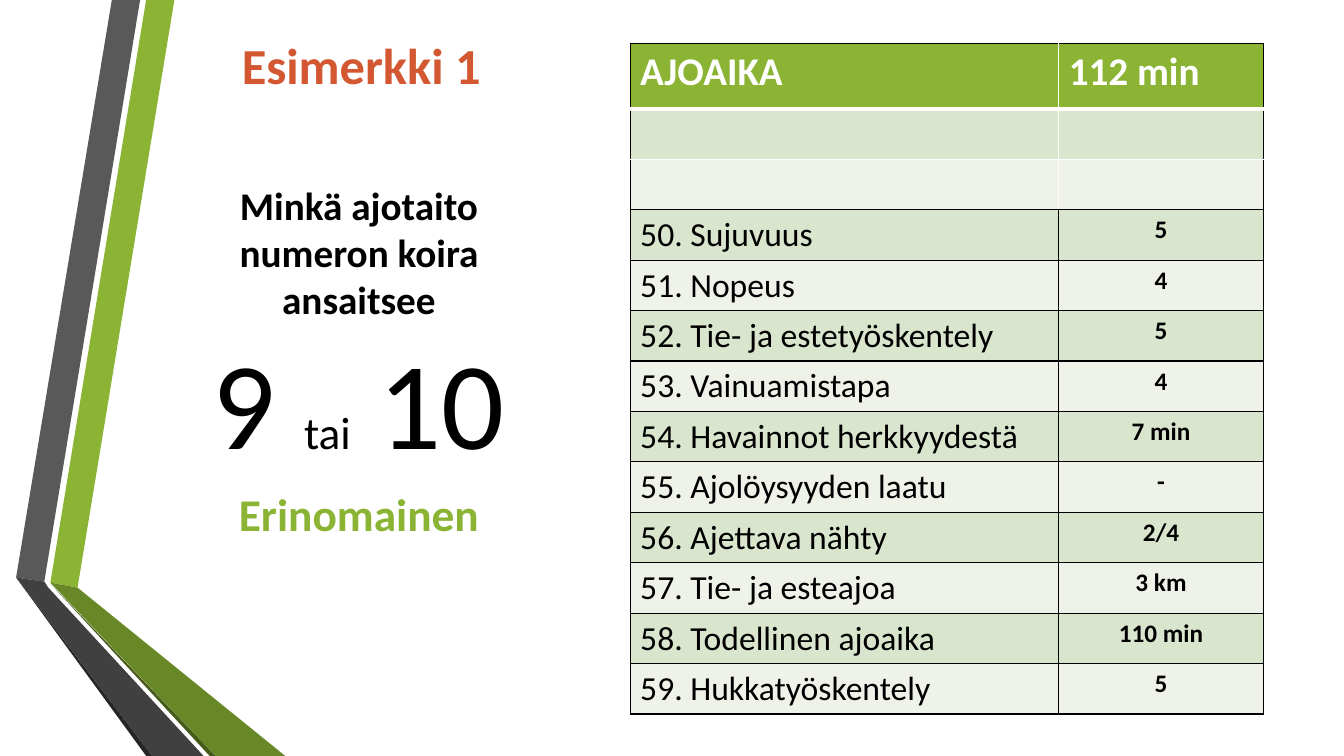
import pptx
import pptx.util
import pptx.dml.color
import pptx.enum.text
import pptx.oxml
import pptx.oxml.ns

Inches = pptx.util.Inches
Pt = pptx.util.Pt
ALIGN = pptx.enum.text.PP_ALIGN
ANCHOR = pptx.enum.text.MSO_ANCHOR

BLACK, WHITE = "000000", "FFFFFF"
GREEN, ORANGE = "8BB434", "D35731"
BANDS = ["DAE5CE", "EEF2E8"]

# Ribbon pieces: fill and corner points, in inches from the ribbon's corner
RIBBONS = [
    (GREEN, [(0.5, 5.78), (0.77, 5.83), (1.73, 0), (1.45, 0)]),
    ("595959", [(1.39, 0), (1.11, 0), (0.16, 5.73), (0.44, 5.77)]),
    ("262626", [(0.16, 5.73), (1.45, 7.5), (1.51, 7.5)]),
    ("465A1A", [(0.5, 5.79), (2.08, 7.5), (2.14, 7.5)]),
    ("688727", [(0.5, 5.78), (2.14, 7.5), (2.83, 7.5), (0.77, 5.83)]),
    ("404040", [(2.02, 7.5), (0.48, 5.83), (0.44, 5.77), (0.16, 5.73), (1.51, 7.5)]),
]

SCORES = [
    ("AJOAIKA", "112 min"),
    ("", ""),
    ("", ""),
    ("50. Sujuvuus", "5"),
    ("51. Nopeus", "4"),
    ("52. Tie- ja estetyöskentely", "5"),
    ("53. Vainuamistapa", "4"),
    ("54. Havainnot herkkyydestä", "7 min"),
    ("55. Ajolöysyyden laatu", "-"),
    ("56. Ajettava nähty", "2/4"),
    ("57. Tie- ja esteajoa", "3 km"),
    ("58. Todellinen ajoaika", "110 min"),
    ("59. Hukkatyöskentely", "5"),
]
FIRST_SCORE = 3


def rgb(color):
    return pptx.dml.color.RGBColor.from_string(color)


def add_run(p, text, size, color=BLACK, bold=False):
    r = p.add_run()
    r.text = text
    r.font.name = "Calibri"
    r.font.size = Pt(size)
    r.font.bold = bold
    r.font.color.rgb = rgb(color)


def add_text_box(s, x, y, w, h, anchor=ANCHOR.TOP):
    tf = s.shapes.add_textbox(Inches(x), Inches(y), Inches(w), Inches(h)).text_frame
    tf.word_wrap = True
    tf.vertical_anchor = anchor
    return tf


def add_ribbons(s, x, y):
    for color, points in RIBBONS:
        corners = [(Inches(x + px), Inches(y + py)) for px, py in points]
        builder = s.shapes.build_freeform(*corners[0])
        builder.add_line_segments(corners[1:], close=True)
        sp = builder.convert_to_shape()
        sp.shadow.inherit = False
        sp.fill.solid()
        sp.fill.fore_color.rgb = rgb(color)
        sp.line.fill.background()


def add_question(s, x, y, w):
    # Heading
    tf = add_text_box(s, x + 0.68, y, 3.37, 0.71)
    add_run(tf.paragraphs[0], "Esimerkki 1", 36, ORANGE, True)

    # Question
    tf = add_text_box(s, x, y + 1.46, w, 1.5, ANCHOR.BOTTOM)
    p = tf.paragraphs[0]
    p.alignment = ALIGN.CENTER
    add_run(p, "Minkä ajotaito numeron koira ansaitsee", 28, BLACK, True)

    # Answer
    tf = add_text_box(s, x, y + 2.94, w, 2)
    tf.margin_top = tf.margin_bottom = 0
    p = tf.paragraphs[0]
    p.alignment = ALIGN.CENTER
    p.space_after = Pt(6)
    add_run(p, "9 ", 88.8)
    add_run(p, "tai", 32.4)
    add_run(p, " 10", 88.8)
    p = tf.add_paragraph()
    p.alignment = ALIGN.CENTER
    p.space_before = Pt(2)
    add_run(p, "Erinomainen", 32.4, GREEN, True)


def set_borders(cell, borders):
    tc_pr = cell._tc.get_or_add_tcPr()
    for i, side in enumerate("LRTB"):
        color, width = borders[side]
        tc_pr.insert(i, pptx.oxml.parse_xml(
            f'<a:ln{side} {pptx.oxml.ns.nsdecls("a")} w="{Pt(width)}"><a:solidFill>'
            f'<a:srgbClr val="{color}"/></a:solidFill></a:ln{side}>'))


def cell_borders(row, col):
    borders = {side: (BLACK, 1) for side in "LRTB"}
    if row < FIRST_SCORE:
        borders["L" if col else "R"] = (WHITE, 1)
        if row > 0:
            borders["T"] = (WHITE, 3 if row == 1 else 1)
        if row < FIRST_SCORE - 1:
            borders["B"] = (WHITE, 3 if row == 0 else 1)
    return borders


def add_score_table(s, x, y, widths, header_h, row_h):
    height = header_h + row_h * (len(SCORES) - 1)
    table = s.shapes.add_table(len(SCORES), len(widths), Inches(x), Inches(y),
                               Inches(sum(widths)), Inches(height)).table
    table.first_row = table.horz_banding = False
    for col, width in enumerate(widths):
        table.columns[col].width = Inches(width)
    for row, texts in enumerate(SCORES):
        table.rows[row].height = Inches(row_h if row else header_h)
        for col, text in enumerate(texts):
            cell = table.cell(row, col)
            cell.fill.solid()
            cell.fill.fore_color.rgb = rgb(BANDS[(row - 1) % 2] if row else GREEN)
            set_borders(cell, cell_borders(row, col))
            p = cell.text_frame.paragraphs[0]
            if row == 0:
                add_run(p, text, 28, WHITE, True)
            elif text and col == 0:
                add_run(p, text, 24)
            elif text:
                p.alignment = ALIGN.CENTER
                add_run(p, text, 18, BLACK, True)


def main():
    prs = pptx.Presentation()
    prs.slide_width, prs.slide_height = Inches(13.33), Inches(7.5)
    s = prs.slides.add_slide(prs.slide_layouts[6])
    add_ribbons(s, 0, 0)
    add_question(s, 1.62, 0.29, 3.88)
    add_score_table(s, 6.25, 0.43, [4.25, 2.03], 0.65, 0.5)
    prs.save("out.pptx")


if __name__ == "__main__":
    main()
